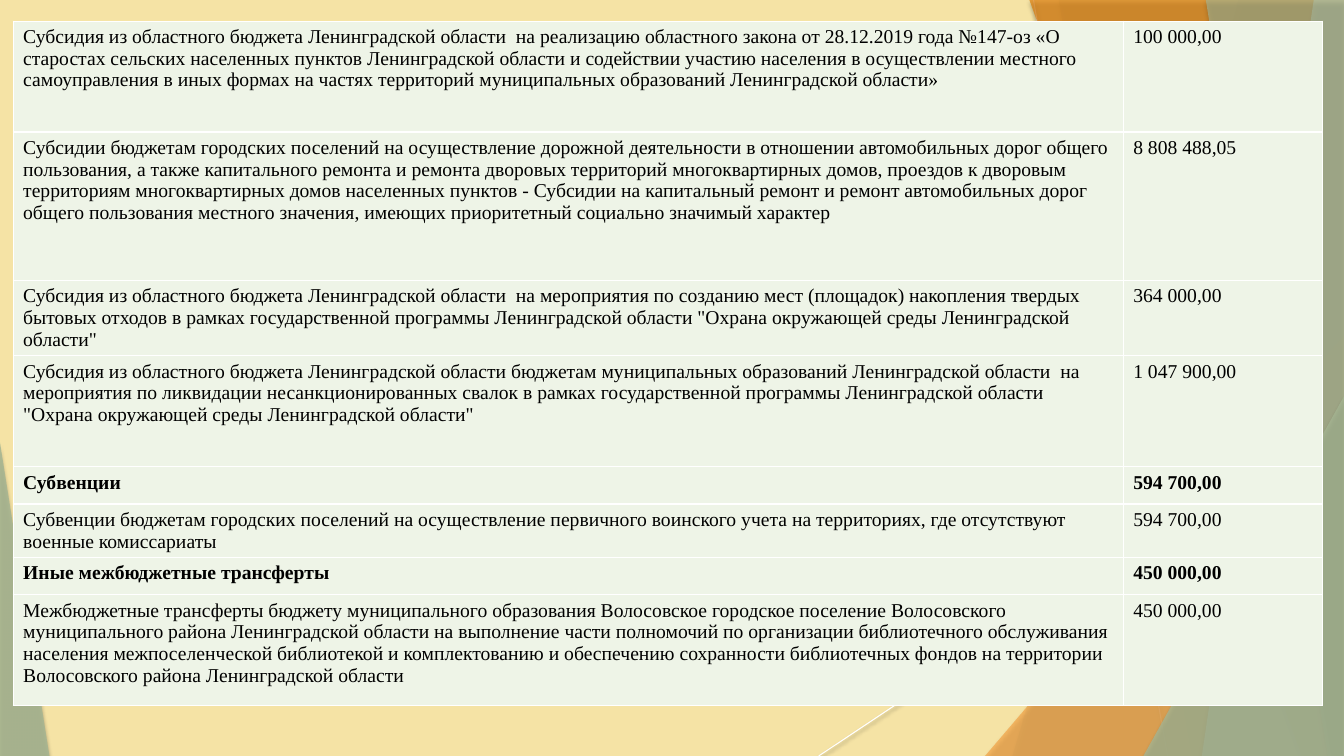
from lxml.etree import SubElement
from pptx import Presentation
from pptx.dml.color import RGBColor
from pptx.enum.shapes import MSO_CONNECTOR, MSO_SHAPE
from pptx.oxml import parse_xml
from pptx.oxml.ns import nsdecls, qn
from pptx.util import Inches, Pt

SAND = RGBColor(0xF5, 0xE3, 0xA5)
SAGE = RGBColor(0xA5, 0xB5, 0x92)
PALE = RGBColor(0xC9, 0xD3, 0xBE)
AMBER = RGBColor(0xF3, 0xA4, 0x47)
RUST = RGBColor(0xDD, 0x7E, 0x0E)
MINT = RGBColor(0xEE, 0xF4, 0xE7)
WHITE = RGBColor(0xFF, 0xFF, 0xFF)
BLACK = RGBColor(0, 0, 0)
WIDE, HIGH = 13.33, 7.5


def add_shadow(shape, alpha, blur, dist):
    shape._element.spPr.append(parse_xml(
        f'<a:effectLst {nsdecls("a")}><a:outerShdw blurRad="{Pt(blur)}" '
        f'dist="{Pt(dist)}" dir="5400000" algn="ctr" rotWithShape="0">'
        f'<a:srgbClr val="{BLACK}"><a:alpha val="{alpha * 1000}"/></a:srgbClr>'
        '</a:outerShdw></a:effectLst>'))


def paint(shape, color, alpha):
    """Fill a facet with a see-through colour, no outline and a soft shadow."""
    shape.fill.solid()
    shape.fill.fore_color.rgb = color
    tint = shape._element.spPr.find(qn("a:solidFill"))[0]
    SubElement(tint, qn("a:alpha"), val=str(alpha * 1000))
    shape.line.fill.background()
    add_shadow(shape, 35, 3, 2)


deck = Presentation()
deck.slide_width, deck.slide_height = Inches(WIDE), Inches(HIGH)
slide = deck.slides.add_slide(deck.slide_layouts[6])
slide.background.fill.solid()
slide.background.fill.fore_color.rgb = SAND
shapes = slide.shapes

# Thin white lines
for x1, y1, x2 in [(10.25, 0, 11.58), (WIDE, 4.03, 8.12)]:
    line = shapes.add_connector(MSO_CONNECTOR.STRAIGHT, Inches(x1), Inches(y1),
                                Inches(x2), Inches(HIGH))
    line.line.color.rgb = WHITE
    line.line.width = Pt(0.75)
    add_shadow(line, 38, 3.1, 1.6)

# Facets from back to front; a band runs from its top and bottom x to the right
# edge, a wedge stands on the bottom edge with its peak at one side
facets = [
    ("band", (12.28, 10.04), SAGE, 30),
    ("band", (10.5, 11.82), SAGE, 20),
    ("wedge", (9.77, 3.33, 3.56, 1), AMBER, 72),
    ("band", (10.21, 12.91), RUST, 70),
    ("band", (13.03, 11.92), PALE, 70),
    ("band", (11.96, 13.17), SAGE, 65),
    ("wedge", (11.34, 3.93, 1.99, 1), SAGE, 80),
    ("wedge", (0, 4.39, 0.49, 0), SAGE, 85),
]
for kind, place, color, alpha in facets:
    if kind == "band":
        top, foot = place
        path = shapes.build_freeform(Inches(top), 0)
        path.add_line_segments([(Inches(x), Inches(y)) for x, y in
                                [(WIDE, 0), (WIDE, HIGH), (foot, HIGH)]])
        facet = path.convert_to_shape()
    else:
        left, top, width, peak = place
        facet = shapes.add_shape(MSO_SHAPE.ISOSCELES_TRIANGLE, Inches(left),
                                 Inches(top), Inches(width), Inches(HIGH - top))
        facet.adjustments[0] = peak
    paint(facet, color, alpha)

# Budget table: height, bold, purpose, sum
rows = [
    (1.1, False, "Субсидия из областного бюджета Ленинградской области  на "
     "реализацию областного закона от 28.12.2019 года №147-оз «О старостах "
     "сельских населенных пунктов Ленинградской области и содействии участию "
     "населения в осуществлении местного самоуправления в иных формах на частях "
     "территорий муниципальных образований Ленинградской области»",
     "100 000,00"),
    (1.47, False, "Субсидии бюджетам городских поселений на осуществление "
     "дорожной деятельности в отношении автомобильных дорог общего пользования, "
     "а также капитального ремонта и ремонта дворовых территорий "
     "многоквартирных домов, проездов к дворовым территориям многоквартирных "
     "домов населенных пунктов - Субсидии на капитальный ремонт и ремонт "
     "автомобильных дорог общего пользования местного значения, имеющих "
     "приоритетный социально значимый характер", "8 808 488,05"),
    (0.75, False, "Субсидия из областного бюджета Ленинградской области  на "
     "мероприятия по созданию мест (площадок) накопления твердых бытовых отходов "
     "в рамках государственной программы Ленинградской области \"Охрана "
     "окружающей среды Ленинградской области\"", "364 000,00"),
    (1.1, False, "Субсидия из областного бюджета Ленинградской области бюджетам "
     "муниципальных образований Ленинградской области  на мероприятия по "
     "ликвидации несанкционированных свалок в рамках государственной программы "
     "Ленинградской области \"Охрана окружающей среды Ленинградской области\"",
     "1 047 900,00"),
    (0.37, True, "Субвенции", "594 700,00"),
    (0.53, False, "Субвенции бюджетам городских поселений на осуществление "
     "первичного воинского учета на территориях, где отсутствуют военные "
     "комиссариаты", "594 700,00"),
    (0.37, True, "Иные межбюджетные трансферты", "450 000,00"),
    (1.1, False, "Межбюджетные трансферты бюджету муниципального образования "
     "Волосовское городское поселение Волосовского муниципального района "
     "Ленинградской области на выполнение части полномочий по организации "
     "библиотечного обслуживания населения межпоселенческой библиотекой и "
     "комплектованию и обеспечению сохранности библиотечных фондов на "
     "территории Волосовского района Ленинградской области", "450 000,00"),
]
table = shapes.add_table(len(rows), 2, Inches(0.13), Inches(0.21),
                         Inches(12.99), Inches(6.77)).table
table.first_row = table.horz_banding = False
for col, width in zip(table.columns, (11.01, 1.98)):
    col.width = Inches(width)
for r, (height, bold, *texts) in enumerate(rows):
    table.rows[r].height = Inches(height)
    for c, text in enumerate(texts):
        cell = table.cell(r, c)
        cell.text = text
        font = cell.text_frame.paragraphs[0].font
        font.name, font.size, font.bold = "Times New Roman", Pt(14), bold
        font.color.rgb = BLACK
        cell.fill.solid()
        cell.fill.fore_color.rgb = MINT
        props = cell._tc.get_or_add_tcPr()
        for i, side in enumerate("LRTB"):
            props.insert(i, parse_xml(
                f'<a:ln{side} {nsdecls("a")} w="{Pt(0.96)}"><a:solidFill>'
                f'<a:srgbClr val="{WHITE}"/></a:solidFill></a:ln{side}>'))

deck.save("out.pptx")
